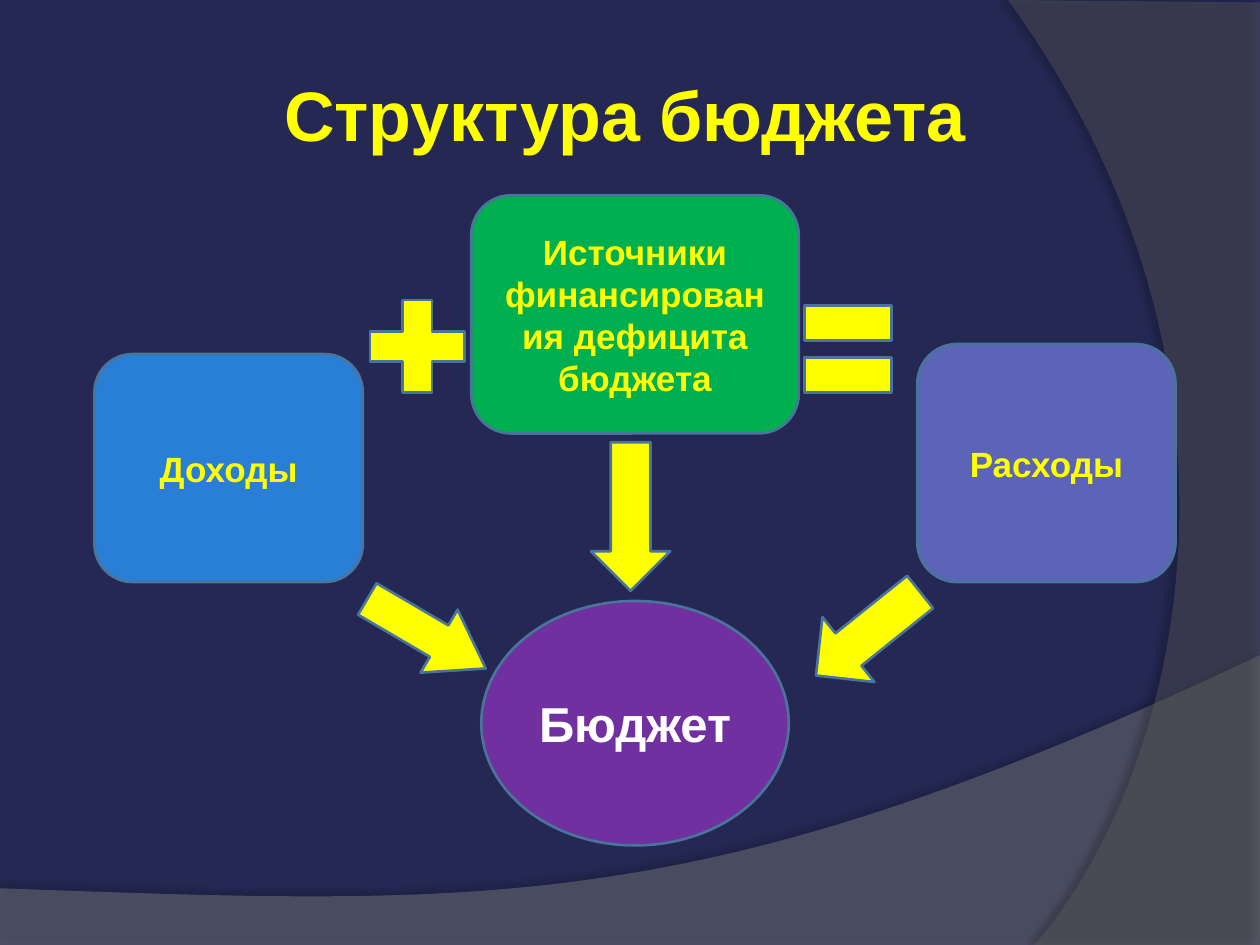
"""Builds a slide showing the structure of a budget."""
from lxml import etree
from pptx import Presentation
from pptx.dml.color import RGBColor
from pptx.enum.shapes import MSO_SHAPE
from pptx.enum.text import MSO_ANCHOR, MSO_AUTO_SIZE, PP_ALIGN
from pptx.oxml.ns import qn
from pptx.util import Inches, Pt

ROUNDED, OVAL = MSO_SHAPE.ROUNDED_RECTANGLE, MSO_SHAPE.OVAL
PLUS, EQUAL = MSO_SHAPE.MATH_PLUS, MSO_SHAPE.MATH_EQUAL
RIGHT, DOWN, LEFT = MSO_SHAPE.RIGHT_ARROW, MSO_SHAPE.DOWN_ARROW, MSO_SHAPE.LEFT_ARROW
CENTER, MIDDLE = PP_ALIGN.CENTER, MSO_ANCHOR.MIDDLE
FIT_SHAPE = MSO_AUTO_SIZE.SHAPE_TO_FIT_TEXT

NAVY = RGBColor(0x24, 0x28, 0x52)
GRAY = RGBColor(0x7F, 0x7F, 0x7F)
DARK_GRAY = RGBColor(0x5E, 0x5E, 0x5E)
BLUE = RGBColor(0x29, 0x7F, 0xD5)
GREEN = RGBColor(0x00, 0xB0, 0x50)
VIOLET = RGBColor(0x5C, 0x64, 0xB7)
PURPLE = RGBColor(0x70, 0x30, 0xA0)
STEEL = RGBColor(0x49, 0x74, 0x9B)
YELLOW = RGBColor(0xFF, 0xFF, 0x00)
WHITE = RGBColor(0xFF, 0xFF, 0xFF)


def bezier(start, control_1, control_2, end, steps=60):
    """Return points along a cubic curve, without its start."""
    points = []
    for step in range(1, steps + 1):
        t = step / steps
        weights = ((1 - t) ** 3, 3 * t * (1 - t) ** 2, 3 * t * t * (1 - t), t ** 3)
        points.append(tuple(
            sum(weight * value for weight, value in zip(weights, values))
            for values in zip(start, control_1, control_2, end)))
    return points


class BudgetSlide:
    """Holds the style and the current slide."""

    font = "Arial"

    def __init__(self, deck):
        self.page = deck.slides.add_slide(deck.slide_layouts[6])
        self.page.background.fill.solid()
        self.page.background.fill.fore_color.rgb = NAVY

    def label(self, frame, text, size, color):
        frame.word_wrap = True
        para = frame.paragraphs[0]
        para.text = text
        para.alignment = CENTER
        para.font.name, para.font.size, para.font.bold = self.font, Pt(size), True
        para.font.color.rgb = color

    def title(self, place, text):
        box = self.page.shapes.add_textbox(*map(Inches, place))
        self.label(box.text_frame, text, 40, YELLOW)
        box.text_frame.auto_size = FIT_SHAPE

    def sign(self, kind, place, fill=YELLOW, rotation=0):
        shape = self.page.shapes.add_shape(kind, *map(Inches, place))
        shape.shadow.inherit = False
        shape.fill.solid()
        shape.fill.fore_color.rgb = fill
        shape.line.color.rgb = STEEL
        shape.line.width = Pt(1.5)
        shape.rotation = rotation
        return shape

    def block(self, kind, place, fill, text, size=20, color=YELLOW):
        frame = self.sign(kind, place, fill).text_frame
        frame.vertical_anchor = MIDDLE
        self.label(frame, text, size, color)

    def wave(self, points, fill, opacity, shade, distance, direction):
        start, *rest = [(Inches(x), Inches(y)) for x, y in points]
        builder = self.page.shapes.build_freeform(*start)
        builder.add_line_segments(rest)
        shape = builder.convert_to_shape()
        shape.line.fill.background()
        shape.fill.solid()
        shape.fill.fore_color.rgb = fill
        shape.shadow.inherit = False
        properties = shape._element.spPr
        fill_color = properties.find(qn("a:solidFill")).find(qn("a:srgbClr"))
        self.opacity(fill_color, opacity)
        shadow = etree.SubElement(
            properties.find(qn("a:effectLst")), qn("a:outerShdw"), blurRad=str(Pt(4)),
            dist=str(Pt(distance)), dir=str(direction * 60000), rotWithShape="0")
        self.opacity(etree.SubElement(shadow, qn("a:srgbClr"), val="000000"), shade)

    def opacity(self, color, percent):
        etree.SubElement(color, qn("a:alpha"), val=str(percent * 1000))


def main():
    deck = Presentation()
    deck.slide_width, deck.slide_height = Inches(10), Inches(7.5)
    slide = BudgetSlide(deck)

    bottom = [(0, 7.05), (0, 7.51), (10, 7.51), (10, 5.2)]
    bottom += bezier((10, 5.2), (5.59, 7.29), (3.91, 7.19), (0, 7.05))
    slide.wave(bottom, GRAY, 45, 35, 3.5, 270)
    side = [(10, 0.02), (10, 7.5), (8.21, 7.5)]
    side += bezier((8.21, 7.5), (9.35, 6.19), (10.18, 3), (8, 0))
    slide.wave(side, DARK_GRAY, 40, 45, 4, 180)

    slide.title((1.77, 0.52, 6.38, 0.77), "Структура бюджета")
    slide.block(ROUNDED, (0.75, 2.81, 2.13, 1.81), BLUE, "Доходы")
    slide.block(ROUNDED, (3.74, 1.55, 2.6, 1.89), GREEN,
                "Источники финансирования дефицита бюджета")
    slide.block(ROUNDED, (7.28, 2.73, 2.05, 1.89), VIOLET, "Расходы")
    slide.block(OVAL, (3.82, 4.77, 2.44, 1.94), PURPLE, "Бюджет", 28, WHITE)

    slide.sign(PLUS, (2.8, 2.25, 1.02, 1))
    slide.sign(EQUAL, (6.26, 2.18, 0.94, 1.18))
    income_arrow = slide.sign(RIGHT, (2.84, 4.74, 1.09, 0.58), rotation=30.4)
    income_arrow.adjustments[1] = 0.74
    slide.sign(DOWN, (4.69, 3.51, 0.63, 1.18))
    slide.sign(LEFT, (6.36, 4.7, 1.06, 0.66), rotation=321.3)
    deck.save("out.pptx")


if __name__ == "__main__":
    main()
